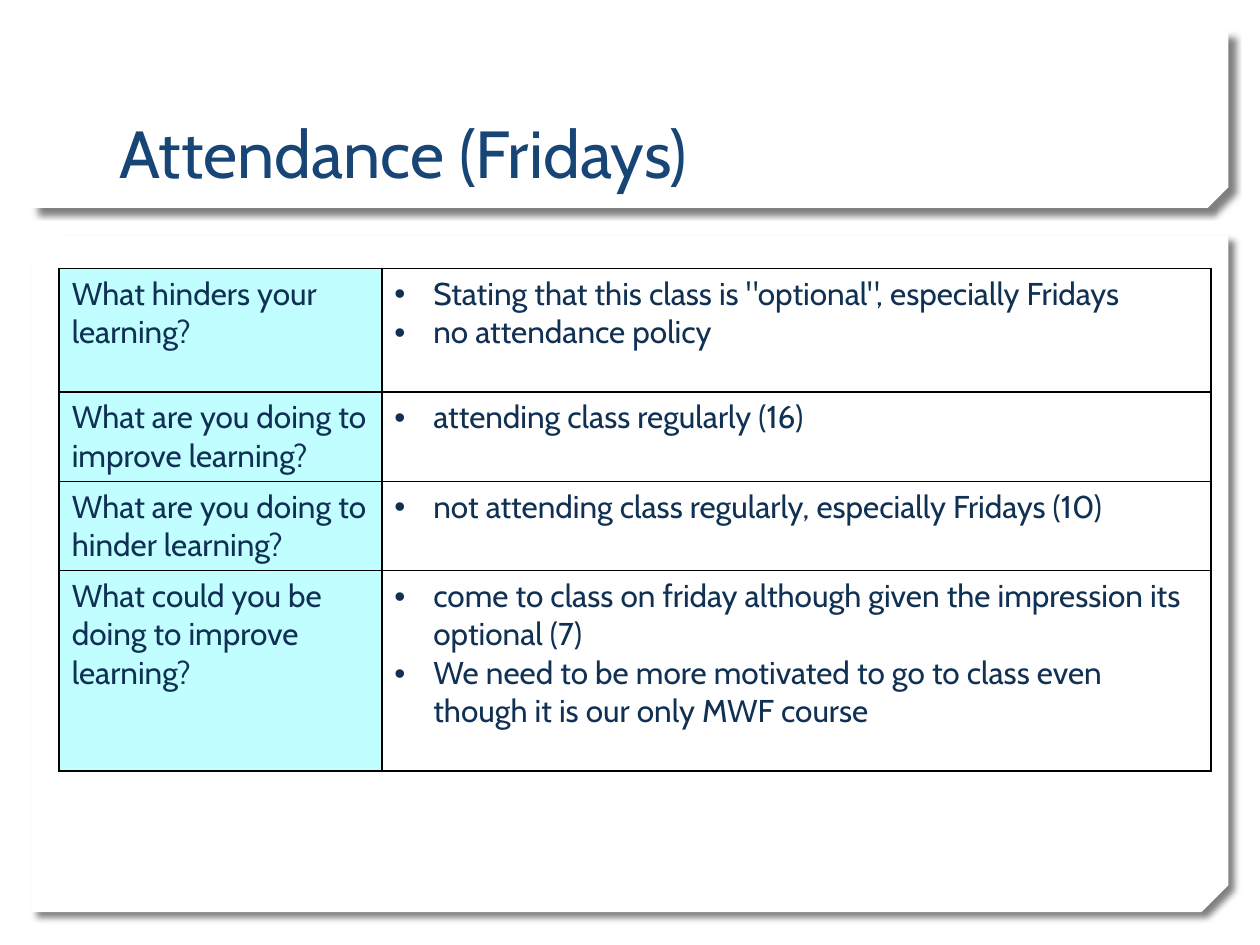
from lxml import etree
from pptx import Presentation
from pptx.dml.color import RGBColor
from pptx.enum.shapes import MSO_SHAPE
from pptx.enum.text import MSO_ANCHOR
from pptx.oxml import parse_xml
from pptx.oxml.ns import nsdecls, qn
from pptx.util import Inches, Pt

PANEL_SHAPE = MSO_SHAPE.SNIP_2_DIAG_RECTANGLE
BOTTOM = MSO_ANCHOR.BOTTOM
WHITE = RGBColor(0xFF, 0xFF, 0xFF)
BLACK = RGBColor(0x00, 0x00, 0x00)
TITLE_BLUE = RGBColor(0x17, 0x45, 0x76)
TEXT_BLUE = RGBColor(0x10, 0x31, 0x54)
QUESTION_CYAN = RGBColor(0xC0, 0xFE, 0xFF)

TITLE_FORMAT = {"name": "Cabin", "size": Pt(38)}
BODY_FORMAT = {"name": "Cabin", "size": Pt(18)}
COLUMN_WIDTHS = [2.56, 6.58]
ROWS = [
    (0.98, "What hinders your learning?", [
        'Stating that this class is "optional", especially Fridays',
        "no attendance policy",
    ]),
    (0.71, "What are you doing to improve learning?", [
        "attending class regularly (16)",
    ]),
    (0.71, "What are you doing to hinder learning?", [
        "not attending class regularly, especially Fridays (10)",
    ]),
    (1.59, "What could you be doing to improve learning?", [
        "come to class on friday although given the impression its optional (7)",
        "We need to be more motivated to go to class even though it is our only MWF course",
    ]),
]


def add_run(paragraph, text, font_format, color):
    run = paragraph.add_run()
    run.text = text
    for name, value in font_format.items():
        setattr(run.font, name, value)
    run.font.color.rgb = color


def add_panel(slide, box, snip):
    panel = slide.shapes.add_shape(PANEL_SHAPE, *map(Inches, box))
    panel.adjustments[0] = 0
    panel.adjustments[1] = snip
    panel.fill.solid()
    panel.fill.fore_color.rgb = WHITE
    panel.line.fill.background()
    panel.shadow.inherit = False
    properties = panel.element.spPr
    properties.find(qn("a:xfrm")).set("flipV", "1")
    properties.find(qn("a:effectLst")).append(parse_xml(
        f'<a:outerShdw {nsdecls("a")} blurRad="{Pt(4)}" dist="{Pt(5)}" '
        f'dir="{45 * 60000}" algn="tl" rotWithShape="0">'
        f'<a:srgbClr val="{BLACK}"><a:alpha val="50000"/></a:srgbClr></a:outerShdw>'
    ))


def add_title(slide, box, text):
    frame = slide.shapes.add_textbox(*map(Inches, box)).text_frame
    frame.word_wrap = True
    frame.vertical_anchor = BOTTOM
    add_run(frame.paragraphs[0], text, TITLE_FORMAT, TITLE_BLUE)


def add_bullet(paragraph):
    properties = paragraph._p.get_or_add_pPr()
    properties.set("marL", str(Inches(0.31)))
    properties.set("indent", str(Inches(-0.31)))
    etree.SubElement(properties, qn("a:buFont"), typeface="Arial")
    etree.SubElement(properties, qn("a:buChar"), char="•")


def add_borders(cell):
    properties = cell._tc.get_or_add_tcPr()
    for index, side in enumerate(("lnL", "lnR", "lnT", "lnB")):
        properties.insert(index, parse_xml(
            f'<a:{side} {nsdecls("a")} w="{Pt(1)}"><a:solidFill>'
            f'<a:srgbClr val="{BLACK}"/></a:solidFill></a:{side}>'
        ))


def fill_cell(cell, texts, bulleted):
    for index, text in enumerate(texts):
        frame = cell.text_frame
        paragraph = frame.add_paragraph() if index else frame.paragraphs[0]
        if bulleted:
            add_bullet(paragraph)
        add_run(paragraph, text, BODY_FORMAT, TEXT_BLUE)
    if bulleted:
        cell.fill.background()
    else:
        cell.fill.solid()
        cell.fill.fore_color.rgb = QUESTION_CYAN
    add_borders(cell)


def add_answers(slide, box):
    table = slide.shapes.add_table(
        len(ROWS), len(COLUMN_WIDTHS), *map(Inches, box)
    ).table
    table.first_row = False
    table.horz_banding = False
    for column, width in zip(table.columns, COLUMN_WIDTHS):
        column.width = Inches(width)
    for row, (height, question, answers) in zip(table.rows, ROWS):
        row.height = Inches(height)
        question_cell, answer_cell = row.cells
        fill_cell(question_cell, [question], False)
        fill_cell(answer_cell, answers, True)


def main():
    presentation = Presentation()
    presentation.slide_width = Inches(10)
    presentation.slide_height = Inches(7.5)
    slide = presentation.slides.add_slide(presentation.slide_layouts[6])
    add_panel(slide, (0.25, 1.87, 9.5, 5.37), 0.04)
    add_panel(slide, (0.25, 0.25, 9.5, 1.4), 0.117)
    add_title(slide, (0.85, 0.32, 8.29, 1.25), "Attendance (Fridays)")
    table_height = sum(height for height, _, _ in ROWS)
    add_answers(slide, (0.47, 2.13, sum(COLUMN_WIDTHS), table_height))
    presentation.save("out.pptx")


if __name__ == "__main__":
    main()
